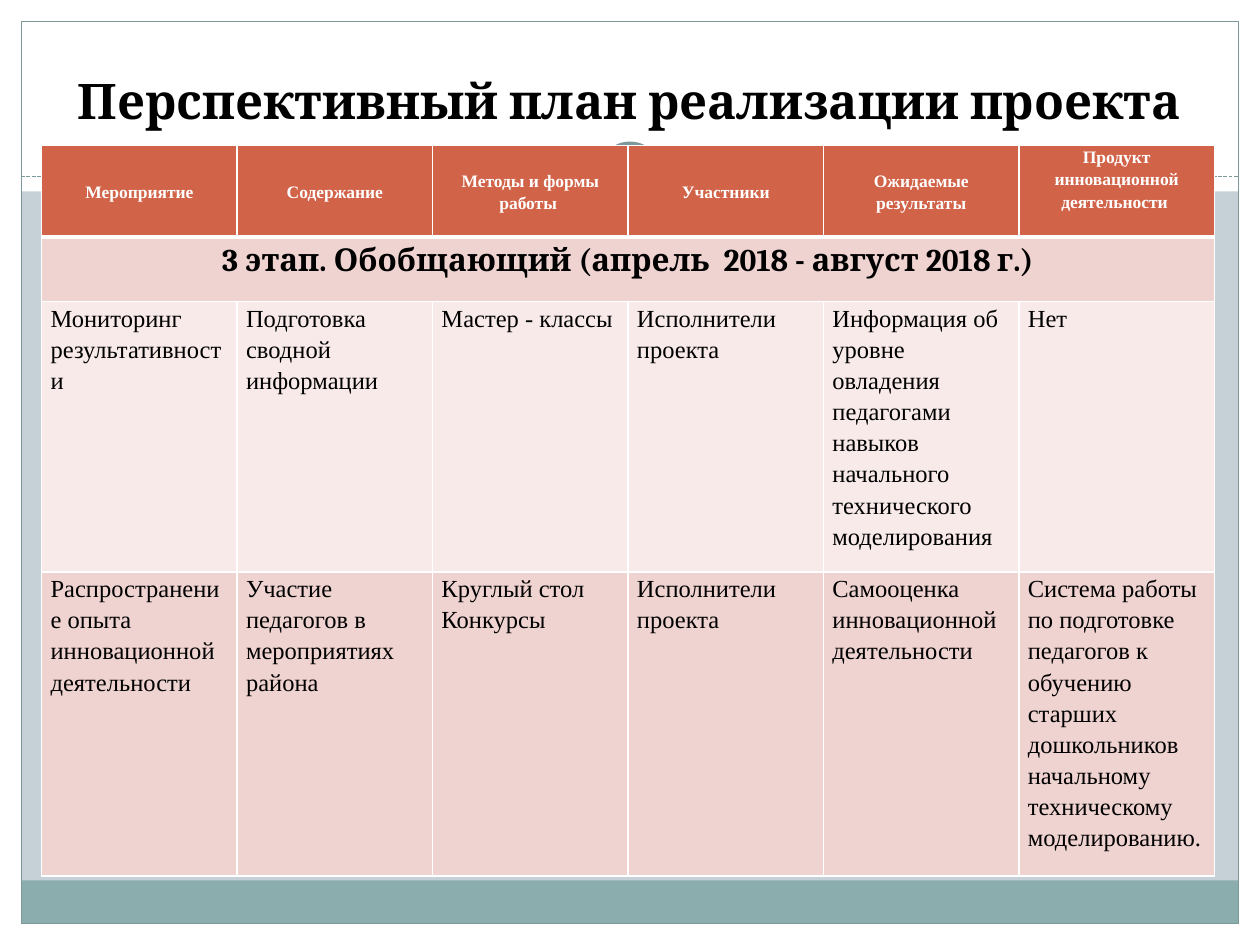
from lxml.etree import SubElement
from pptx import Presentation
from pptx.dml.color import RGBColor
from pptx.enum.dml import MSO_LINE_DASH_STYLE as Dash
from pptx.enum.shapes import MSO_CONNECTOR as Connector, MSO_SHAPE as Shape
from pptx.enum.text import MSO_ANCHOR as Anchor, PP_ALIGN as Align
from pptx.oxml.ns import qn
from pptx.util import Cm, Pt

WIDTH, HEIGHT, MARGIN = 25.4, 19.05, 0.43
WHITE, BLACK, TEAL = "FFFFFF", "000000", "7C999A"
HEADER_FILL, DARK_BAND, LIGHT_BAND = "D16349", "EED3D0", "F7EAE9"
HEADING_FONT, BODY_FONT = "Cambria", "Times New Roman"

HEADERS = ["Мероприятие", "Содержание", "Методы и формы работы ", "Участники",
           "Ожидаемые результаты", "Продукт инновационной деятельности "]
STAGE = "3 этап. Обобщающий (апрель  2018 - август 2018 г.)"
MONITORING = [
    "Мониторинг результативности",
    "Подготовка  сводной информации",
    "Мастер - классы",
    "Исполнители проекта",
    "Информация об уровне овладения педагогами навыков начального "
    "технического моделирования",
    "Нет",
]
DISSEMINATION = [
    "Распространение опыта инновационной деятельности",
    "Участие педагогов в мероприятиях района",
    "Круглый стол Конкурсы",
    "Исполнители проекта",
    "Самооценка инновационной деятельности",
    "Система работы по подготовке педагогов к обучению старших "
    "дошкольников начальному техническому моделированию.",
]
COLUMN_WIDTH = 3.94
ROW_HEIGHTS = [1.85, 1.3, 5.16, 5.89]


def color(hex_code):
    return RGBColor.from_string(hex_code)


def add_panel(slide, box, fill=None, line=None, weight=0.75, kind=Shape.RECTANGLE):
    panel = slide.shapes.add_shape(kind, *map(Cm, box))
    panel.shadow.inherit = False
    if fill:
        panel.fill.solid()
        panel.fill.fore_color.rgb = color(fill)
    else:
        panel.fill.background()
    if line:
        panel.line.color.rgb = color(line)
        panel.line.width = Pt(weight)
    else:
        panel.line.fill.background()


def add_ring(slide, center_y, diameter, line=None):
    left, top = (WIDTH - diameter) / 2, center_y - diameter / 2
    add_panel(slide, (left, top, diameter, diameter), WHITE, line, 4, Shape.OVAL)


def add_divider(slide, y):
    divider = slide.shapes.add_connector(
        Connector.STRAIGHT, Cm(MARGIN), Cm(y), Cm(WIDTH - MARGIN), Cm(y))
    divider.line.color.rgb = color(TEAL)
    divider.line.width = Pt(0.75)
    divider.line.dash_style = Dash.SQUARE_DOT
    SubElement(divider._element.spPr, qn("a:effectLst"))


def add_backdrop(slide):
    slide.background.fill.solid()
    slide.background.fill.fore_color.rgb = color("C5D1D7")
    inner_width = WIDTH - 2 * MARGIN
    for box in [(0, HEIGHT - MARGIN, WIDTH, MARGIN), (0, 0, WIDTH, 3.86),
                (0, 0, MARGIN, HEIGHT), (WIDTH - MARGIN, 0, MARGIN, HEIGHT)]:
        add_panel(slide, box, WHITE)
    add_panel(slide, (MARGIN, 17.75, inner_width, 0.87), "8CADAE")
    add_panel(slide, (MARGIN, MARGIN, inner_width, HEIGHT - 2 * MARGIN), line=TEAL)
    add_divider(slide, 3.56)
    add_ring(slide, 3.51, 1.7)
    add_ring(slide, 3.51, 1.17, TEAL)


def write(frame, text, size, font, text_color, bold, align, spacing=None):
    frame.text = text
    frame.word_wrap = True
    paragraph = frame.paragraphs[0]
    paragraph.alignment = align
    paragraph.line_spacing = spacing
    for run in paragraph.runs:
        run.font.size, run.font.name, run.font.bold = Pt(size), font, bold
        run.font.color.rgb = color(text_color)


def add_title(slide, text):
    title = slide.shapes.add_textbox(Cm(0.84), Cm(0.64), Cm(23.7), Cm(2.1))
    write(title.text_frame, text, 28, HEADING_FONT, BLACK, True, Align.CENTER)
    title.text_frame.vertical_anchor = Anchor.BOTTOM


def style_cell(cell, fill, bottom_weight=1):
    """Borders go in before the fill, as the schema orders them."""
    properties = cell._tc.get_or_add_tcPr()
    for side, weight in zip("LRTB", (1, 1, 1, bottom_weight)):
        border = SubElement(properties, qn(f"a:ln{side}"), w=str(Pt(weight)))
        solid = SubElement(border, qn("a:solidFill"))
        SubElement(solid, qn("a:srgbClr"), val=WHITE)
    cell.fill.solid()
    cell.fill.fore_color.rgb = color(fill)


def set_tight_margins(cell):
    cell.margin_left = cell.margin_right = Cm(0.18)
    cell.margin_top = cell.margin_bottom = 0


def fill_header(cells):
    for cell, text in zip(cells, HEADERS):
        style_cell(cell, HEADER_FILL, bottom_weight=3)
        set_tight_margins(cell)
        write(cell.text_frame, text, 10, BODY_FONT, WHITE, True, Align.CENTER, 1.15)
        cell.vertical_anchor = Anchor.MIDDLE
    cells[-1].vertical_anchor = Anchor.TOP


def fill_stage(cells):
    for cell in cells:
        style_cell(cell, DARK_BAND)
    cells[0].merge(cells[-1])
    write(cells[0].text_frame, STAGE, 18, HEADING_FONT, BLACK, True, Align.CENTER)


def fill_activity(cells, texts, band):
    for cell, text in zip(cells, texts):
        style_cell(cell, band)
        set_tight_margins(cell)
        write(cell.text_frame, text, 14, BODY_FONT, BLACK, False, Align.LEFT, 1.15)


def add_plan(slide):
    columns = len(HEADERS)
    plan = slide.shapes.add_table(
        len(ROW_HEIGHTS), columns, Cm(0.84), Cm(2.93),
        Cm(COLUMN_WIDTH * columns), Cm(sum(ROW_HEIGHTS))).table
    for column in plan.columns:
        column.width = Cm(COLUMN_WIDTH)
    for row, height in zip(plan.rows, ROW_HEIGHTS):
        row.height = Cm(height)
    header, stage, monitoring, dissemination = [list(row.cells) for row in plan.rows]
    fill_header(header)
    fill_stage(stage)
    fill_activity(monitoring, MONITORING, LIGHT_BAND)
    fill_activity(dissemination, DISSEMINATION, DARK_BAND)


def main():
    presentation = Presentation()
    presentation.slide_width, presentation.slide_height = Cm(WIDTH), Cm(HEIGHT)
    slide = presentation.slides.add_slide(presentation.slide_layouts[6])
    add_backdrop(slide)
    add_title(slide, "Перспективный план реализации проекта")
    add_plan(slide)
    presentation.save("out.pptx")


if __name__ == "__main__":
    main()
